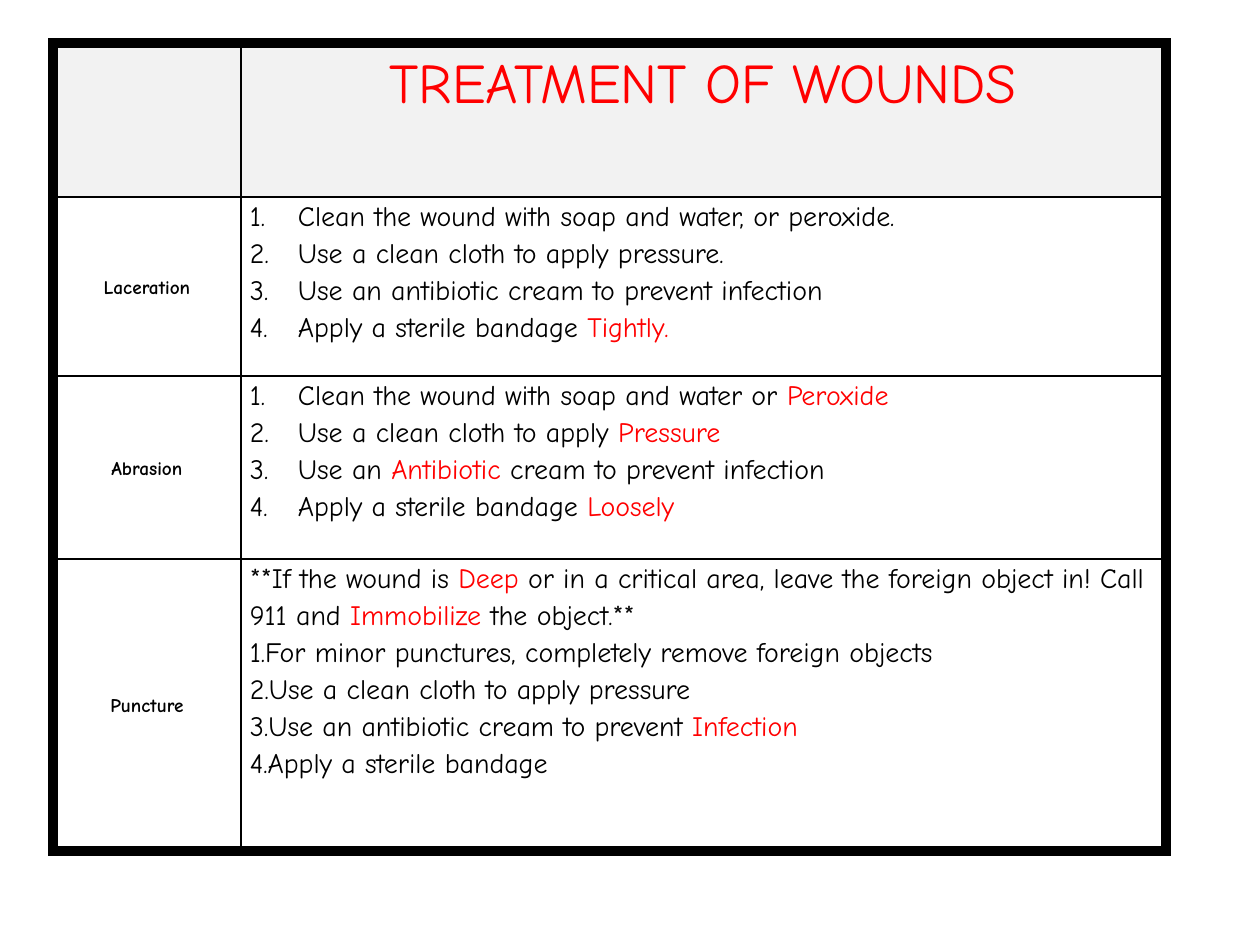
from lxml.etree import SubElement
from pptx import Presentation
from pptx.dml.color import RGBColor
from pptx.enum.text import MSO_ANCHOR, PP_ALIGN
from pptx.oxml.ns import qn
from pptx.util import Pt

PX = 914400 / 126
FONT = "Comic Neue"
COLORS = {"ink": "000000", "accent": "FF0000", "header": "F2F2F2", "body": "FFFFFF"}
COLUMN_WIDTHS = [188, 925]
ROW_HEIGHTS = [154, 179, 183, 292]
TREATMENTS = [
    ("Laceration", 48, [
        "Clean the wound with soap and water, or peroxide.",
        "Use a clean cloth to apply pressure.",
        "Use an antibiotic cream to prevent infection",
        "Apply a sterile bandage |Tightly.",
    ]),
    ("Abrasion", 48, [
        "Clean the wound with soap and water or| Peroxide",
        "Use a clean cloth to apply |Pressure",
        "Use an |Antibiotic |cream to prevent infection",
        "Apply a sterile bandage |Loosely",
    ]),
    ("Puncture", 0, [
        "**If the wound is |Deep| or in a critical area, leave the foreign object in! "
        "Call 911 and| Immobilize| the object.**",
        "For minor punctures, completely remove foreign objects",
        "Use a clean cloth to apply pressure",
        "Use an antibiotic cream to prevent |Infection",
        "Apply a sterile bandage",
    ]),
]


def px(length):
    return round(length * PX)


def write(para, marked_text, size, colors, bold=False):
    para.line_spacing = 1.15
    for position, text in enumerate(marked_text.split("|")):
        span = para.add_run()
        span.text = text
        span.font.name = FONT
        span.font.size = Pt(size)
        span.font.bold = bold
        span.font.color.rgb = RGBColor.from_string(COLORS[colors[position % 2]])


deck = Presentation()
deck.slide_width, deck.slide_height = px(1260), px(945)
page = deck.slides.add_slide(deck.slide_layouts[6])
frame = page.shapes.add_table(
    4, 2, px(53), px(43), px(sum(COLUMN_WIDTHS)), px(sum(ROW_HEIGHTS))
)
table = frame.table
table.first_row = False
table.horz_banding = False
for column, width in zip(table.columns, COLUMN_WIDTHS):
    column.width = px(width)
for row, height in zip(table.rows, ROW_HEIGHTS):
    row.height = px(height)

for row_index in range(4):
    for column_index in range(2):
        cell = table.cell(row_index, column_index)
        cell.margin_left = cell.margin_right = px(9)
        cell.margin_top = cell.margin_bottom = 0
        outer_edges = {
            "L": column_index == 0,
            "R": column_index == 1,
            "T": row_index == 0,
            "B": row_index == 3,
        }
        properties = cell._tc.get_or_add_tcPr()
        for side, outer in outer_edges.items():
            border = SubElement(properties, qn(f"a:ln{side}"), w=str(Pt(6 if outer else 1)))
            paint = SubElement(border, qn("a:solidFill"))
            SubElement(paint, qn("a:srgbClr"), val=COLORS["ink"])
        cell.fill.solid()
        shade = "header" if row_index == 0 else "body"
        cell.fill.fore_color.rgb = RGBColor.from_string(COLORS[shade])

title = table.cell(0, 1).text_frame.paragraphs[0]
title.alignment = PP_ALIGN.CENTER
write(title, "TREATMENT OF WOUNDS", 32, ["accent", "ink"])

for row_index, (wound, indent, steps) in enumerate(TREATMENTS, start=1):
    label = table.cell(row_index, 0)
    label.vertical_anchor = MSO_ANCHOR.MIDDLE
    para = label.text_frame.paragraphs[0]
    para.alignment = PP_ALIGN.CENTER
    write(para, wound, 11, ["ink", "accent"], bold=True)

    instructions = table.cell(row_index, 1).text_frame
    for step_index, step in enumerate(steps):
        para = instructions.add_paragraph() if step_index else instructions.paragraphs[0]
        write(para, step, 16, ["ink", "accent"])
        if not step.startswith("**"):
            settings = para._p.get_or_add_pPr()
            settings.set("marL", str(px(indent)))
            settings.set("indent", str(-px(indent)))
            SubElement(settings, qn("a:buAutoNum"), type="arabicPeriod")

deck.save("out.pptx")
